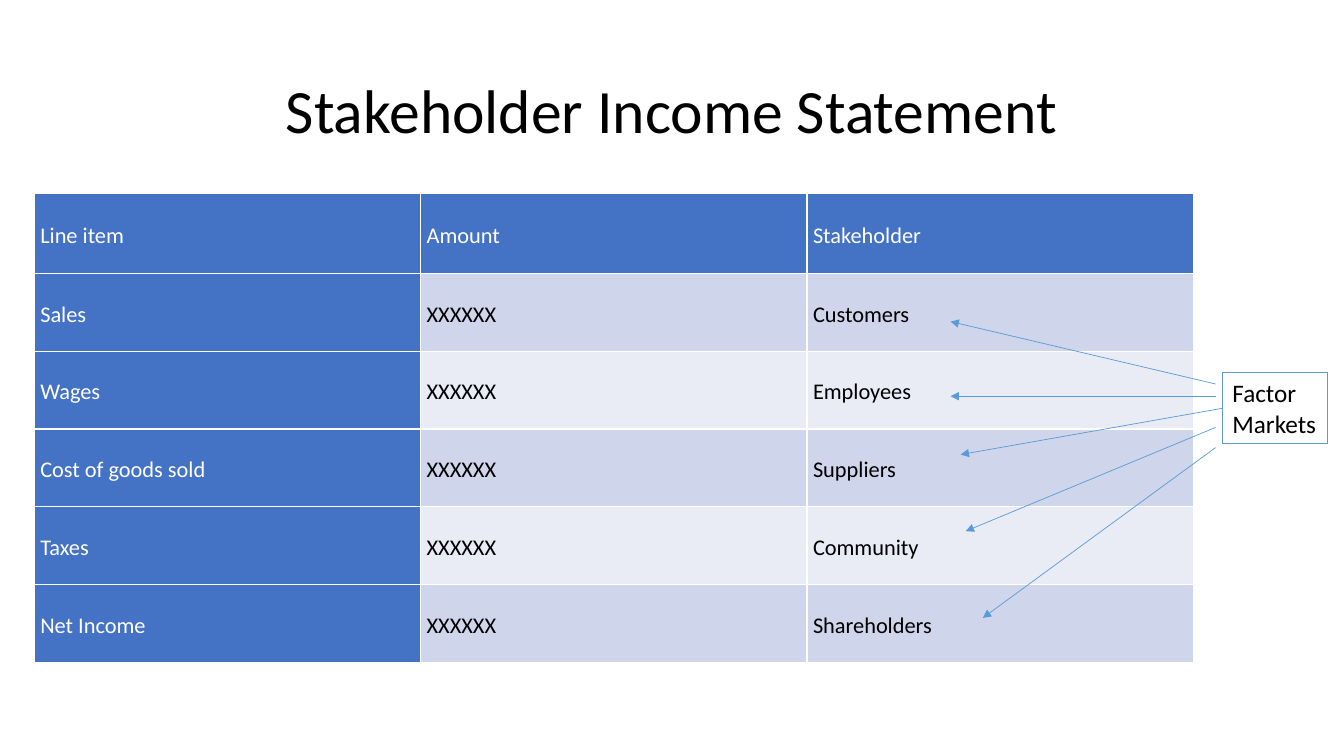
from lxml import etree
from pptx import Presentation
from pptx.dml.color import RGBColor
from pptx.enum.shapes import MSO_CONNECTOR, MSO_SHAPE
from pptx.enum.text import MSO_ANCHOR, MSO_AUTO_SIZE, PP_ALIGN
from pptx.oxml.ns import qn
from pptx.util import Pt

STRAIGHT = MSO_CONNECTOR.STRAIGHT
RECTANGLE = MSO_SHAPE.RECTANGLE
MIDDLE = MSO_ANCHOR.MIDDLE
CENTER, LEFT = PP_ALIGN.CENTER, PP_ALIGN.LEFT
LEFT_SIDE = 1

THEME = {
    "font": "Calibri",
    "title_size": 44,
    "table_size": 16,
    "factor_size": 18,
    "black": RGBColor(0, 0, 0),
    "white": RGBColor(255, 255, 255),
    "heading": RGBColor.from_string("4472C4"),
    "bands": [RGBColor.from_string("CFD5EA"), RGBColor.from_string("E9EBF5")],
    "accent": RGBColor.from_string("5B9BD5"),
}


def style_paragraph(paragraph, size, color, align=LEFT, spacing=1.0):
    paragraph.alignment = align
    paragraph.line_spacing = spacing
    paragraph.font.name = THEME["font"]
    paragraph.font.size = Pt(size)
    paragraph.font.color.rgb = color


def add_cell_borders(cell):
    properties = cell._tc.get_or_add_tcPr()
    for side in ("a:lnL", "a:lnR", "a:lnT", "a:lnB"):
        border = etree.SubElement(properties, qn(side), w=str(Pt(1)))
        fill = etree.SubElement(border, qn("a:solidFill"))
        etree.SubElement(fill, qn("a:srgbClr"), val=str(THEME["white"]))


prs = Presentation()
prs.slide_width, prs.slide_height = Pt(960), Pt(540)
slide = prs.slides.add_slide(prs.slide_layouts[6])

title = slide.shapes.add_textbox(Pt(24.5), Pt(28.8), Pt(910.8), Pt(104.4)).text_frame
title.word_wrap = True
title.vertical_anchor = MIDDLE
title.text = "Stakeholder Income Statement"
style_paragraph(title.paragraphs[0], THEME["title_size"], THEME["black"], CENTER, 0.9)

statement_rows = [
    ("Line item", "Amount", "Stakeholder"),
    ("Sales", "XXXXXX", "Customers"),
    ("Wages", "XXXXXX", "Employees"),
    ("Cost of goods sold", "XXXXXX", "Suppliers"),
    ("Taxes", "XXXXXX", "Community"),
    ("Net Income", "XXXXXX", "Shareholders"),
]
statement = slide.shapes.add_table(
    len(statement_rows), 3, Pt(24.5), Pt(138.5), Pt(828), Pt(334.8)
).table
statement.first_col = True
for column in statement.columns:
    column.width = Pt(276)
for row_index, entries in enumerate(statement_rows):
    statement.rows[row_index].height = Pt(55.6 if row_index else 56.8)
    for column_index, entry in enumerate(entries):
        is_heading = row_index == 0 or column_index == 0
        cell = statement.cell(row_index, column_index)
        cell.text = entry
        cell.vertical_anchor = MIDDLE
        cell.margin_left = Pt(4.3)
        cell.margin_right = cell.margin_top = cell.margin_bottom = Pt(0.7)
        add_cell_borders(cell)
        cell.fill.solid()
        cell.fill.fore_color.rgb = (
            THEME["heading"] if is_heading else THEME["bands"][(row_index - 1) % 2]
        )
        paragraph = cell.text_frame.paragraphs[0]
        style_paragraph(
            paragraph,
            THEME["table_size"],
            THEME["white"] if is_heading else THEME["black"],
            spacing=1.15,
        )
        paragraph.font.bold = False

factor_markets = slide.shapes.add_shape(
    RECTANGLE, Pt(873.2), Pt(266.2), Pt(75.2), Pt(50.9)
)
factor_markets.shadow.inherit = False
factor_markets.fill.background()
factor_markets.line.color.rgb = THEME["accent"]
factor_markets.line.width = Pt(0.75)
factor_text = factor_markets.text_frame
factor_text.text = "Factor\nMarkets"
factor_text.word_wrap = False
factor_text.auto_size = MSO_AUTO_SIZE.SHAPE_TO_FIT_TEXT
factor_text.vertical_anchor = MSO_ANCHOR.TOP
for paragraph in factor_text.paragraphs:
    style_paragraph(paragraph, THEME["factor_size"], THEME["black"])

stakeholder_arrows = [
    (868.3, 274.3, 679, 229.7, False),
    (868.3, 283, 679, 283, False),
    (873.2, 291.6, 686.2, 324.7, True),
    (868.3, 305.3, 689.8, 379.4, False),
    (868.3, 319.7, 702, 441.4, False),
]
for start_x, start_y, end_x, end_y, is_joined in stakeholder_arrows:
    arrow = slide.shapes.add_connector(
        STRAIGHT, Pt(start_x), Pt(start_y), Pt(end_x), Pt(end_y)
    )
    if is_joined:
        arrow.begin_connect(factor_markets, LEFT_SIDE)
    arrow.line.color.rgb = THEME["accent"]
    arrow.line.width = Pt(0.5)
    etree.SubElement(arrow.line._get_or_add_ln(), qn("a:tailEnd"), type="triangle")
    etree.SubElement(arrow._element.spPr, qn("a:effectLst"))

prs.save("out.pptx")
